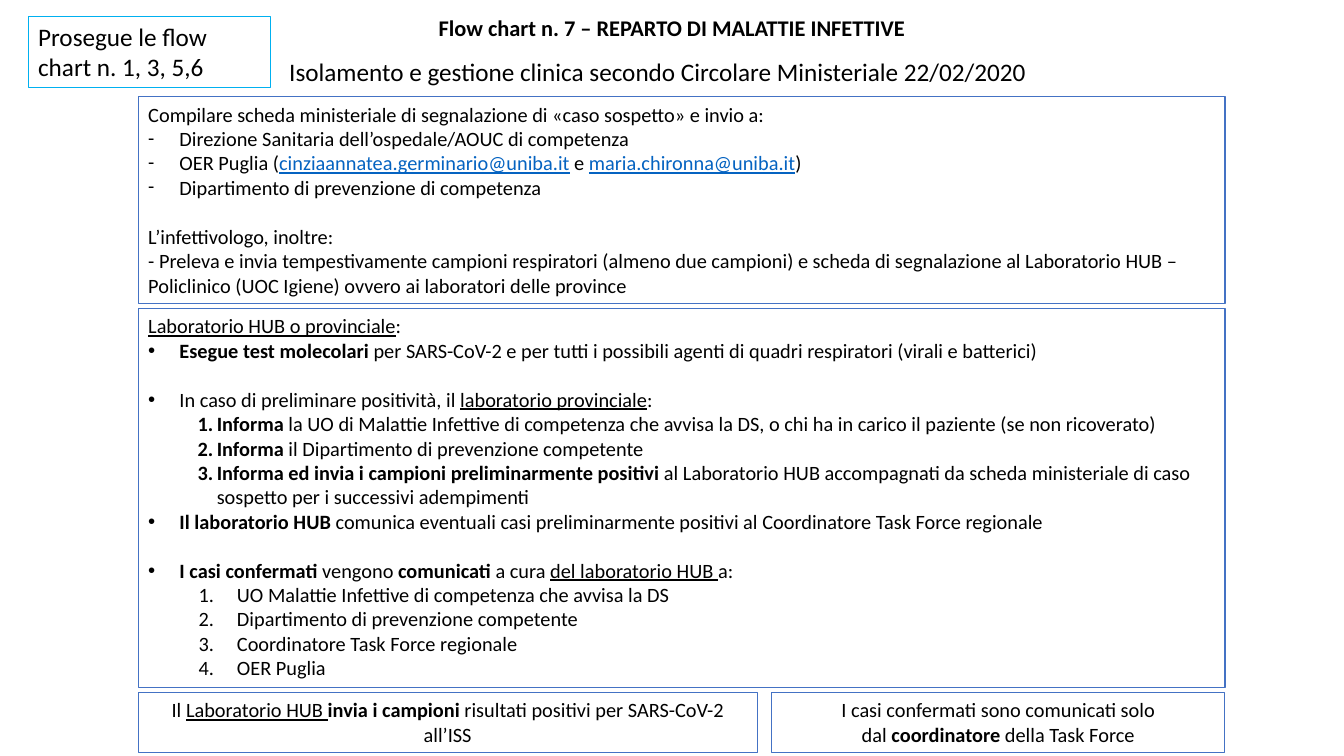
from pptx import Presentation
from pptx.dml.color import RGBColor
from pptx.enum.shapes import MSO_SHAPE as Shape
from pptx.enum.text import MSO_ANCHOR as Anchor, MSO_AUTO_SIZE as AutoSize, PP_ALIGN as Align
from pptx.oxml.ns import qn
from pptx.util import Inches, Pt
from lxml.etree import SubElement


class Theme:
    font = "Calibri"
    text = RGBColor.from_string("000000")
    link = RGBColor.from_string("0563C1")
    border = RGBColor.from_string("4472C4")
    accent = RGBColor.from_string("00B0F0")
    title, lead, body = 16, 18, 14.5
    gap = 17.7  # one body line, in points


# Content: a paragraph is (list kind, gap before, runs);
# a run is (text, style) with b = bold, u = underlined, l = link look
TITLE = [("", False, [("Flow chart n. 7 – REPARTO DI MALATTIE INFETTIVE", "b")])]
SUBTITLE = [("", False, [("Isolamento e gestione clinica secondo Circolare Ministeriale 22/02/2020", "")])]
ORIGIN = [("", False, [("Prosegue le flow chart n. 1, 3, 5,6", "")])]
REPORTING = [
    ("", False, [("Compilare scheda ministeriale di segnalazione di «caso sospetto» e invio a:", "")]),
    ("dash", False, [("Direzione Sanitaria dell’ospedale/AOUC di competenza", "")]),
    ("dash", False, [("OER Puglia (", ""), ("cinziaannatea.germinario@uniba.it", "ul"), (" e ", ""),
                     ("maria.chironna@uniba.it", "ul"), (")", "")]),
    ("dash", False, [("Dipartimento di prevenzione di competenza", "")]),
    ("", True, [("L’infettivologo, inoltre:", "")]),
    ("", False, [("- Preleva e invia tempestivamente campioni respiratori (almeno due campioni) e scheda di "
                  "segnalazione al Laboratorio HUB – Policlinico (UOC Igiene) ovvero ai laboratori delle "
                  "province", "")]),
]
LABORATORY = [
    ("", False, [("Laboratorio HUB o provinciale", "u"), (":", "")]),
    ("dot", False, [("Esegue test molecolari ", "b"),
                    ("per SARS-CoV-2 e per tutti i possibili agenti di quadri respiratori "
                     "(virali e batterici)", "")]),
    ("dot", True, [("In caso di preliminare positività, il ", ""), ("laboratorio provinciale", "u"), (":", "")]),
    ("step", False, [("Informa", "b"),
                     (" la UO di Malattie Infettive di competenza che avvisa la DS, o chi ha in carico "
                      "il paziente (se non ricoverato)", "")]),
    ("step", False, [("Informa ", "b"), ("il Dipartimento di prevenzione competente", "")]),
    ("step", False, [("Informa ed invia i campioni preliminarmente positivi", "b"),
                     (" al Laboratorio HUB accompagnati da scheda ministeriale di caso sospetto "
                      "per i successivi adempimenti", "")]),
    ("dot", False, [("Il laboratorio HUB ", "b"),
                    ("comunica eventuali casi preliminarmente positivi al Coordinatore Task Force "
                     "regionale", "")]),
    ("dot", True, [("I casi confermati ", "b"), ("vengono ", ""), ("comunicati", "b"), (" a cura ", ""),
                   ("del laboratorio HUB ", "u"), ("a:", "")]),
    ("number", False, [("UO Malattie Infettive di competenza che avvisa la DS", "")]),
    ("number", False, [("Dipartimento di prevenzione competente", "")]),
    ("number", False, [("Coordinatore Task Force regionale", "")]),
    ("number", False, [("OER Puglia", "")]),
]
SAMPLES = [("", False, [("Il ", ""), ("Laboratorio HUB ", "u"), ("invia i campioni ", "b"),
                        ("risultati positivi per SARS-CoV-2 all’ISS", "")])]
CONFIRMED = [
    ("", False, [("I casi confermati sono comunicati solo", "")]),
    ("", False, [("dal ", ""), ("coordinatore", "b"), (" della Task Force", "")]),
]

# List kinds: level, left margin, hanging indent, bullet tag, bullet attributes
LISTS = {
    "": (0, 0, 0, "a:buNone", {}),
    "dash": (0, 0.31, 0.31, "a:buChar", {"char": "-"}),
    "dot": (0, 0.31, 0.31, "a:buChar", {"char": "•"}),
    "step": (1, 0.68, 0.19, "a:buAutoNum", {"type": "arabicPeriod"}),
    "number": (1, 0.88, 0.38, "a:buAutoNum", {"type": "arabicPeriod"}),
}

# Column of boxes, in inches
LEFT, WIDTH, GAP = 1.37, 10.78, 0.05
TOP, REPORT_H, LAB_H = 0.96, 2.05, 3.76
SAMPLES_W, CONFIRMED_W = 6.14, 4.5
LAB_TOP = TOP + REPORT_H + GAP
END_TOP = LAB_TOP + LAB_H + GAP
CONFIRMED_LEFT = LEFT + WIDTH - CONFIRMED_W


def write(sp, paragraphs, size=Theme.body, align=Align.LEFT):
    tf = sp.text_frame
    tf.word_wrap = True
    tf.auto_size = AutoSize.NONE
    tf.vertical_anchor = Anchor.TOP
    for i, (kind, gap, runs) in enumerate(paragraphs):
        p = tf.paragraphs[0] if i == 0 else tf.add_paragraph()
        level, margin, hang, tag, attrs = LISTS[kind]
        pPr = p._p.get_or_add_pPr()
        pPr.set("marL", str(Inches(margin)))
        pPr.set("indent", str(-Inches(hang)))
        if tag == "a:buChar":
            SubElement(pPr, qn("a:buFont"), typeface="Arial" if kind == "dot" else Theme.font)
        SubElement(pPr, qn(tag), **attrs)
        p.level, p.alignment, p.line_spacing = level, align, 1.0
        p.space_before, p.space_after = Pt(Theme.gap if gap else 0), Pt(0)
        for text, style in runs:
            r = p.add_run()
            r.text = text
            r.font.name, r.font.size = Theme.font, Pt(size)
            r.font.bold, r.font.underline = "b" in style, "u" in style
            r.font.color.rgb = Theme.link if "l" in style else Theme.text


def place(sp, box):
    sp.left, sp.top, sp.width, sp.height = map(Inches, box)
    return sp


def outline(sp, color=Theme.border):
    sp.fill.background()
    sp.line.color.rgb = color
    sp.line.width = Pt(0.75)


prs = Presentation()
prs.slide_width, prs.slide_height = Inches(13.33), Inches(7.5)
s = prs.slides.add_slide(prs.slide_layouts[3])
title, reporting, laboratory = s.placeholders

# Headings
write(place(title, (1.18, 0.09, 10.97, 0.64)), TITLE, size=Theme.title, align=Align.CENTER)
subtitle = s.shapes.add_textbox(*map(Inches, (2.77, 0.51, 7.78, 0.41)))
write(subtitle, SUBTITLE, size=Theme.lead)

# Main lists
for sp, top, height, content in ((reporting, TOP, REPORT_H, REPORTING),
                                 (laboratory, LAB_TOP, LAB_H, LABORATORY)):
    outline(place(sp, (LEFT, top, WIDTH, height)))
    write(sp, content)

# Origin note and closing boxes
for box, content, color, size, align in (
    ((0.28, 0.16, 2.4, 0.71), ORIGIN, Theme.accent, Theme.lead, Align.LEFT),
    ((LEFT, END_TOP, SAMPLES_W, 0.6), SAMPLES, Theme.border, Theme.body, Align.CENTER),
    ((CONFIRMED_LEFT, END_TOP, CONFIRMED_W, 0.6), CONFIRMED, Theme.border, Theme.body, Align.CENTER),
):
    sp = s.shapes.add_shape(Shape.RECTANGLE, *map(Inches, box))
    sp.shadow.inherit = False
    outline(sp, color)
    write(sp, content, size=size, align=align)

prs.save("out.pptx")
